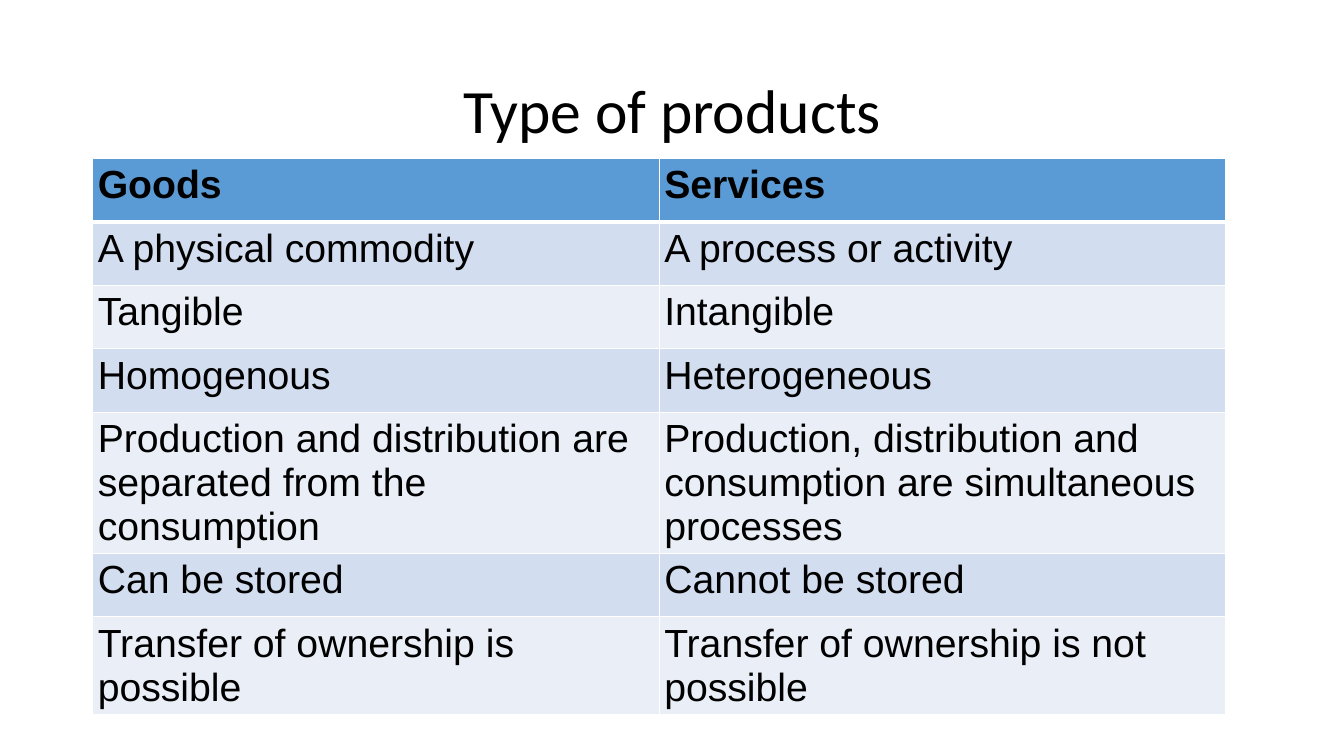
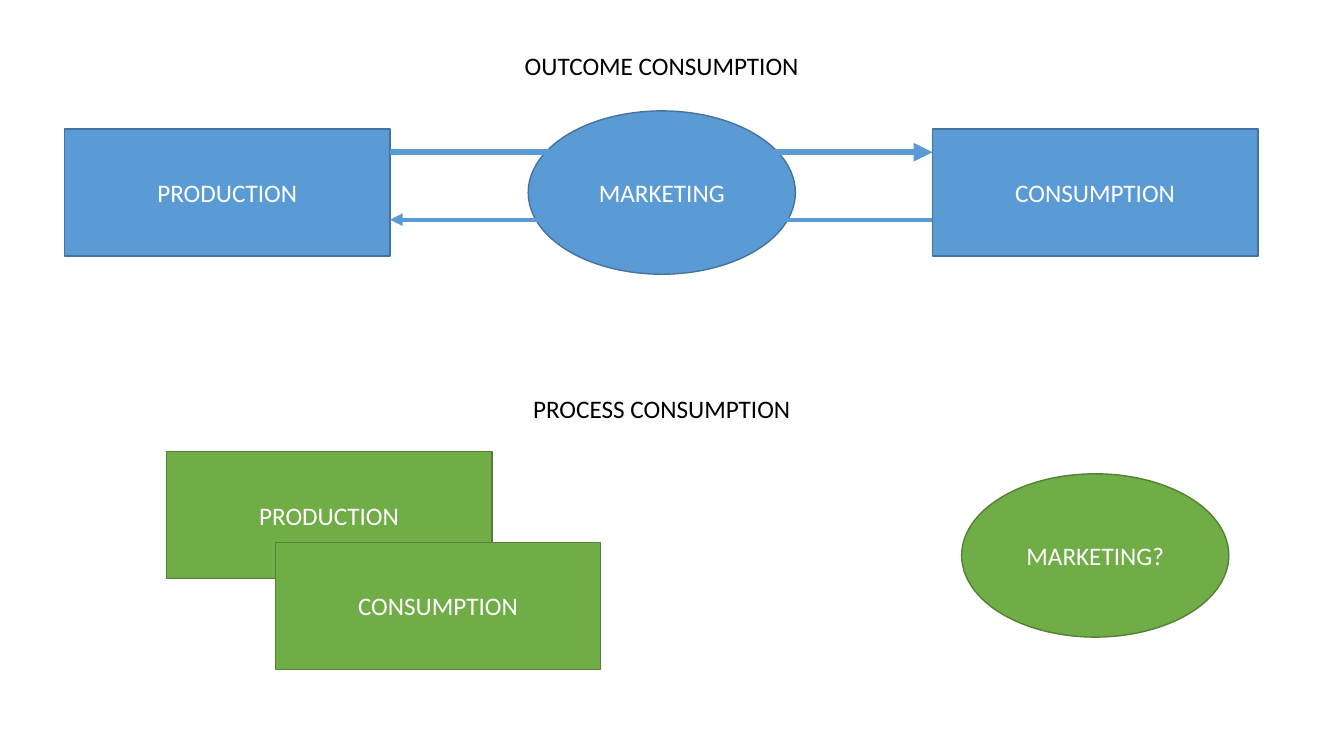
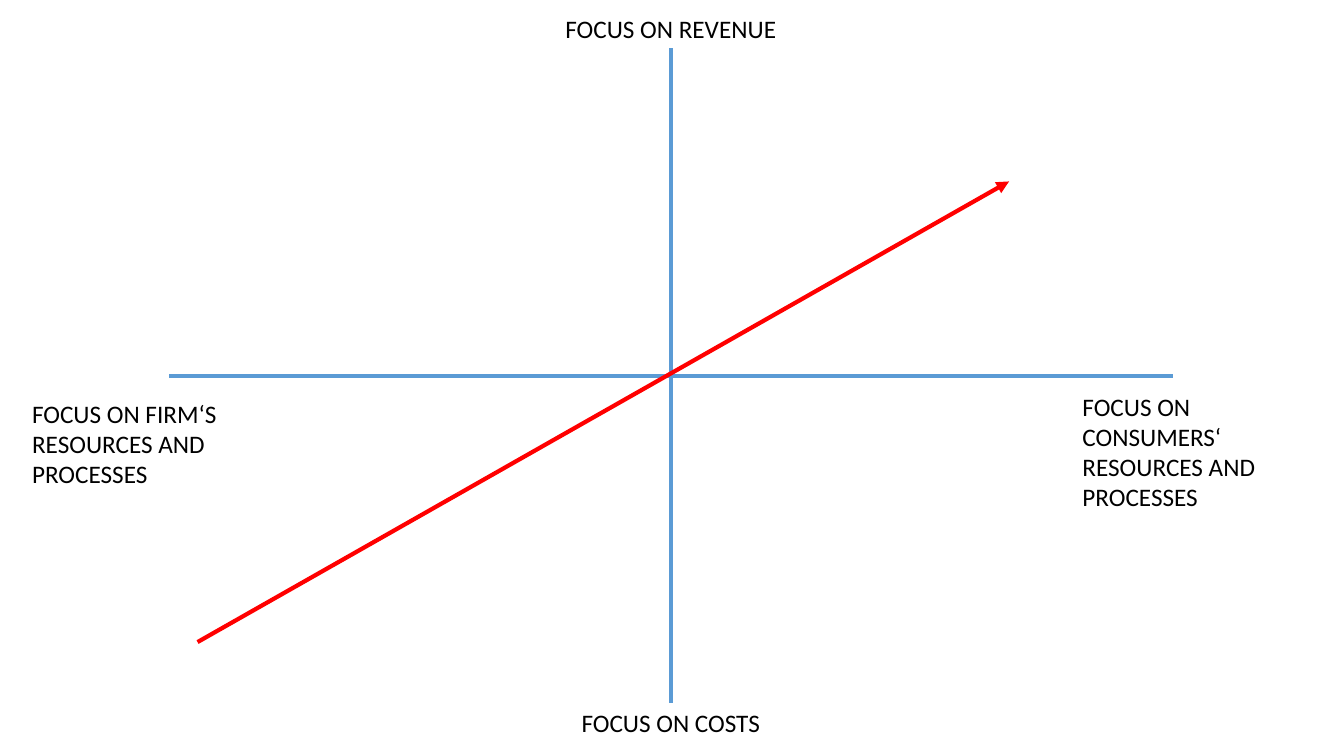
from dataclasses import dataclass

from lxml.etree import SubElement
from pptx import Presentation
from pptx.dml.color import RGBColor
from pptx.enum.shapes import MSO_CONNECTOR, MSO_SHAPE
from pptx.enum.text import MSO_ANCHOR, MSO_AUTO_SIZE, PP_ALIGN
from pptx.oxml import parse_xml
from pptx.oxml.ns import nsdecls, qn
from pptx.util import Inches, Pt


@dataclass(frozen=True)
class Theme:
    """Colours, fonts and type sizes of the deck."""
    text: str = "000000"
    white: str = "FFFFFF"
    blue: str = "5B9BD5"
    blue_edge: str = "43739E"
    green: str = "70AD47"
    green_edge: str = "538035"
    red: str = "FF0000"
    bands: tuple = ("D2DEEF", "EAEFF7")
    font: str = "Calibri"
    table_font: str = "Arial"
    title_size: int = 44
    table_size: int = 28
    label_size: int = 18


T = Theme()
WIDTH, HEIGHT = Inches(13.333), Inches(7.5)
BOX = (24.22, 16.8)
OVAL = (19.88, 21.6)
LINE_ROW = 5.38
PRODUCTS = [
    ("Goods", "Services"),
    ("A physical commodity", "A process or activity"),
    ("Tangible", "Intangible"),
    ("Homogenous", "Heterogeneous"),
    ("Production and distribution are separated from the consumption",
     "Production, distribution and consumption are simultaneous processes"),
    ("Can be stored", "Cannot be stored"),
    ("Transfer of ownership is possible", "Transfer of ownership is not possible"),
]


def x(share):
    """Turn a percentage of the slide width into a length."""
    return int(WIDTH * share / 100)


def y(share):
    """Turn a percentage of the slide height into a length."""
    return int(HEIGHT * share / 100)


def place(left, top, width, height):
    """Turn four percentages into a position and size."""
    return x(left), y(top), x(width), y(height)


def rgb(color):
    """Turn a hex string into a colour."""
    return RGBColor.from_string(color)


def add_run(p, text, size, color=T.text, font=T.font, bold=False):
    """Append a formatted run to a paragraph."""
    r = p.add_run()
    r.text = text
    r.font.size, r.font.name, r.font.bold = Pt(size), font, bold
    r.font.color.rgb = rgb(color)


def add_text(slide, area, lines, size=T.label_size, align=PP_ALIGN.LEFT, wrap=False):
    """Add a text box with one paragraph per line."""
    tf = slide.shapes.add_textbox(*place(*area)).text_frame
    tf.word_wrap = wrap
    tf.auto_size = MSO_AUTO_SIZE.SHAPE_TO_FIT_TEXT
    for i, line in enumerate(lines):
        p = tf.add_paragraph() if i else tf.paragraphs[0]
        p.alignment = align
        add_run(p, line, size)
    return tf


def add_title(slide, text):
    """Add the centred slide title."""
    area = (6.9, 5.33, 86.25, 19.33)
    tf = add_text(slide, area, [text], T.title_size, PP_ALIGN.CENTER, True)
    tf.auto_size = MSO_AUTO_SIZE.NONE
    tf.vertical_anchor = MSO_ANCHOR.MIDDLE
    tf.paragraphs[0].line_spacing = 0.9


def add_node(slide, kind, left, top, text, fill, edge):
    """Add a filled rectangle or oval with a centred label."""
    size = OVAL if kind == MSO_SHAPE.OVAL else BOX
    sp = slide.shapes.add_shape(kind, *place(left, top, *size))
    sp.shadow.inherit = False
    sp.fill.solid()
    sp.fill.fore_color.rgb = rgb(fill)
    sp.line.color.rgb = rgb(edge)
    sp.line.width = Pt(1)
    tf = sp.text_frame
    tf.word_wrap = True
    tf.vertical_anchor = MSO_ANCHOR.MIDDLE
    p = tf.paragraphs[0]
    p.alignment = PP_ALIGN.CENTER
    add_run(p, text, T.label_size, T.white)


def add_line(slide, start, end, color=T.blue, width=3, arrow=False):
    """Add a straight line, with an arrowhead at its end if asked."""
    ends = x(start[0]), y(start[1]), x(end[0]), y(end[1])
    line = slide.shapes.add_connector(MSO_CONNECTOR.STRAIGHT, *ends)
    line.line.color.rgb = rgb(color)
    line.line.width = Pt(width)
    if arrow:
        SubElement(line.line._get_or_add_ln(), qn("a:tailEnd"), type="triangle")
    SubElement(line._element.spPr, qn("a:effectLst"))


def set_borders(cell, bottom):
    """Give a cell white borders with the chosen bottom width."""
    widths = {"lnL": 1, "lnR": 1, "lnT": 1, "lnB": bottom}
    for i, (side, width) in enumerate(widths.items()):
        ln = parse_xml(
            f'<a:{side} {nsdecls("a")} w="{Pt(width)}"><a:solidFill>'
            f'<a:srgbClr val="{T.white}"/></a:solidFill></a:{side}>')
        cell._tc.get_or_add_tcPr().insert(i, ln)


def add_banded_table(slide, left, top, width, heights, rows):
    """Add a table with a header row and alternating bands."""
    area = place(left, top, width, sum(heights))
    table = slide.shapes.add_table(len(rows), len(rows[0]), *area).table
    table.horz_banding = False
    for i, (height, row) in enumerate(zip(heights, rows)):
        header = i == 0
        table.rows[i].height = y(height)
        for j, text in enumerate(row):
            cell = table.cell(i, j)
            cell.margin_left = cell.margin_right = Inches(0.05)
            cell.margin_top = cell.margin_bottom = Inches(0.05)
            cell.fill.solid()
            cell.fill.fore_color.rgb = rgb(T.blue if header else T.bands[(i - 1) % 2])
            set_borders(cell, 3 if header else 1)
            add_run(cell.text_frame.paragraphs[0], text, T.table_size,
                    font=T.table_font, bold=header)


def build_products(slide):
    """Compare goods and services in a table."""
    add_title(slide, "Type of products")
    heights = [8.4] * 4 + [15.87, 8.4, 11.07]
    add_banded_table(slide, 6.9, 20.93, 84.3, heights, PRODUCTS)


def build_consumption(slide):
    """Contrast outcome consumption with process consumption."""
    blue, green = (T.blue, T.blue_edge), (T.green, T.green_edge)
    left, right, top = 4.8, 69.38, 17.07
    for kind, col, row, text, colors in (
        (MSO_SHAPE.OVAL, 39.3, 14.67, "MARKETING", blue),
        (MSO_SHAPE.RECTANGLE, left, top, "PRODUCTION", blue),
        (MSO_SHAPE.RECTANGLE, right, top, "CONSUMPTION", blue),
        (MSO_SHAPE.OVAL, 71.55, 62.67, "MARKETING?", green),
        (MSO_SHAPE.RECTANGLE, 12.38, 59.73, "PRODUCTION", green),
        (MSO_SHAPE.RECTANGLE, 20.48, 71.73, "CONSUMPTION", green),
    ):
        add_node(slide, kind, col, row, text, *colors)
    for row, text in ((6, "OUTCOME CONSUMPTION"), (51.33, "PROCESS CONSUMPTION")):
        add_text(slide, (37.88, row, 22.72, LINE_ROW), [text],
                 align=PP_ALIGN.CENTER, wrap=True)
    edge = left + BOX[0]
    add_line(slide, (edge, 20.13), (right, 20.13), width=4.5, arrow=True)
    add_line(slide, (right, 29.07), (edge, 29.07), arrow=True)


def build_focus(slide):
    """Draw the two focus axes and the shift across them."""
    add_line(slide, (49.95, 6.4), (49.95, 92.93))
    add_line(slide, (12.6, 49.73), (87.3, 49.73))
    for left, top, width, lines in (
        (41.33, 1.07, 17.32, ["FOCUS ON REVENUE"]),
        (42.53, 92.93, 14.92, ["FOCUS ON COSTS"]),
        (1.65, 52, 15.82, ["FOCUS ON FIRM‘S", "RESOURCES AND", "PROCESSES"]),
        (79.8, 51.07, 14.92,
         ["FOCUS ON", "CONSUMERS‘", "RESOURCES AND", "PROCESSES"]),
    ):
        height = LINE_ROW + 4.04 * (len(lines) - 1)
        add_text(slide, (left, top, width, height), lines)
    add_line(slide, (14.7, 84.93), (75.08, 24), T.red, arrow=True)


def main():
    """Build and save the deck."""
    prs = Presentation()
    prs.slide_width, prs.slide_height = WIDTH, HEIGHT
    for build in (build_products, build_consumption, build_focus):
        build(prs.slides.add_slide(prs.slide_layouts[6]))
    prs.save("out.pptx")


if __name__ == "__main__":
    main()
